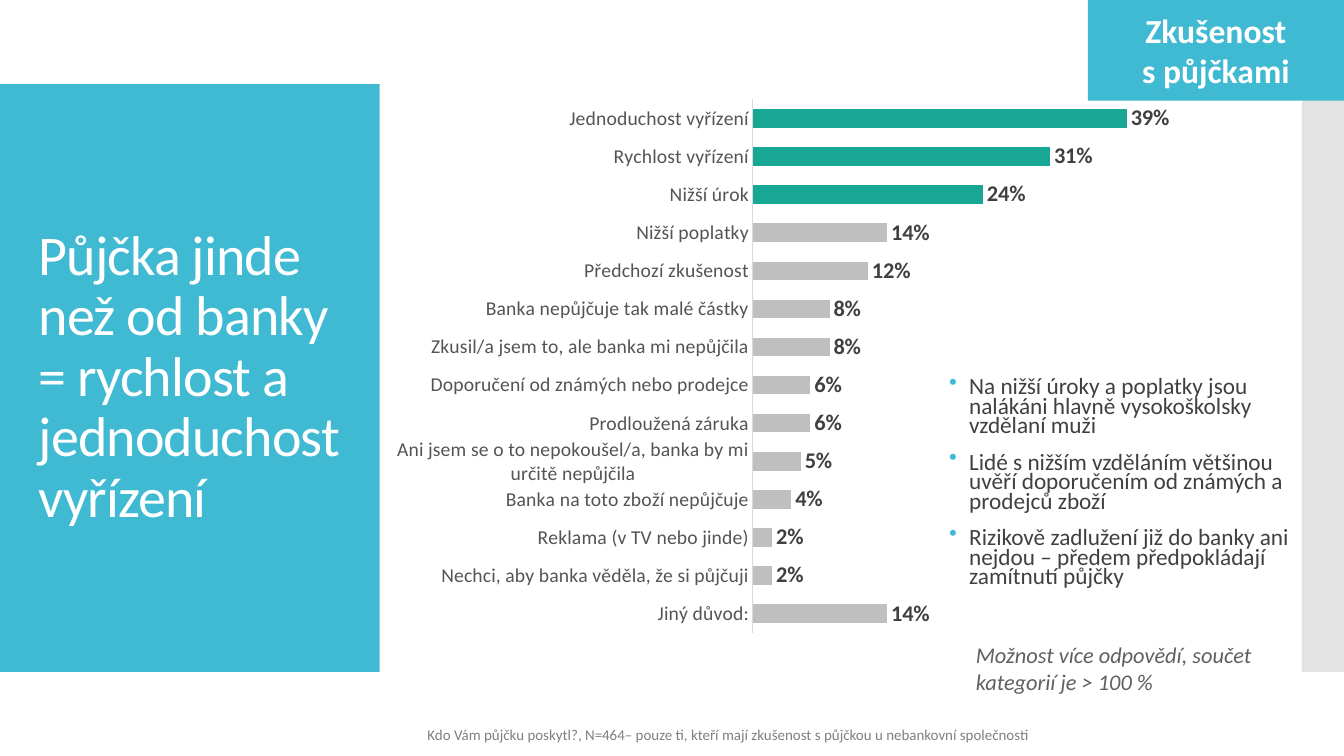
"""Build the slide on reasons for borrowing outside a bank."""
from dataclasses import dataclass

from lxml import etree
from pptx import Presentation, util as u
from pptx.chart.data import CategoryChartData
from pptx.dml.color import RGBColor
from pptx.enum import chart as charts, shapes, text
from pptx.oxml.ns import qn

FONT = "Calibri"
TURQUOISE = RGBColor(0x40, 0xBA, 0xD2)
GREEN = RGBColor(0x18, 0xA7, 0x94)
WHITE = RGBColor(0xFF, 0xFF, 0xFF)
STRIPE_GREY = RGBColor(0xC8, 0xC8, 0xC8)
BAR_GREY = RGBColor(0xBF, 0xBF, 0xBF)
AXIS_GREY = RGBColor(0xD9, 0xD9, 0xD9)
CATEGORY_GREY = RGBColor(0x54, 0x54, 0x54)
DARK_GREY = RGBColor(0x40, 0x40, 0x40)
NOTE_GREY = RGBColor(0x60, 0x60, 0x60)
SOURCE_GREY = RGBColor(0x80, 0x80, 0x80)

SLIDE_WIDTH, SLIDE_HEIGHT = u.Inches(13.33), u.Inches(7.5)
COLUMNS, ROWS = 160, 90


@dataclass(frozen=True)
class Area:
    """A rectangle in grid columns and rows."""
    column: float
    row: float
    columns: float
    rows: float

    def lengths(self) -> tuple[int, int, int, int]:
        """Return left, top, width and height on the slide."""
        across, down = SLIDE_WIDTH / COLUMNS, SLIDE_HEIGHT / ROWS
        return (round(self.column * across), round(self.row * down),
                round(self.columns * across), round(self.rows * down))


@dataclass(frozen=True)
class Panel:
    """A filled rectangle."""
    area: Area
    color: RGBColor
    opacity: int = 100


@dataclass(frozen=True)
class Caption:
    """A block of equally formatted paragraphs."""
    area: Area
    lines: tuple[str, ...]
    size: float
    color: RGBColor
    bold: bool = False
    italic: bool = False
    centred: bool = False
    middle: bool = False
    bulleted: bool = False
    line_spacing: float = 1.0
    tracking: int = 0


@dataclass(frozen=True)
class Reason:
    """A reason with its share of answers."""
    label: str
    share: float


TAG_AREA = Area(129.5, 0, 30.5, 12)
CHART_AREA = Area(45, 11.3, 96, 67.2)
PANELS = (
    Panel(Area(0, 10, 45.2, 70), TURQUOISE),
    Panel(Area(155, 10, 5, 70), STRIPE_GREY, opacity=50),
    Panel(TAG_AREA, TURQUOISE),
)
CAPTIONS = (
    Caption(Area(3.4, 14.8, 39.5, 60.4),
            ("Půjčka jinde než od banky = rychlost a jednoduchost vyřízení",),
            40, WHITE, middle=True, line_spacing=0.9, tracking=-60),
    Caption(Area(49.7, 85.8, 110.3, 3.4),
            ("Kdo Vám půjčku poskytl?, N=464– pouze ti, kteří mají zkušenost "
             "s půjčkou u nebankovní společnosti",), 10.7, SOURCE_GREY),
    Caption(Area(115, 75.7, 40.3, 7.7),
            ("Možnost více odpovědí, součet kategorií je > 100 %",),
            16, NOTE_GREY, italic=True),
    Caption(TAG_AREA, ("Zkušenost\vs půjčkami",), 24, WHITE,
            bold=True, centred=True, middle=True),
    Caption(Area(111.8, 42.5, 42.8, 29.4),
            ("Na nižší úroky a poplatky jsou nalákáni hlavně vysokoškolsky vzdělaní muži",
             "Lidé s nižším vzděláním většinou uvěří doporučením od známých a prodejců zboží",
             "Rizikově zadlužení již do banky ani nejdou – předem předpokládají "
             "zamítnutí půjčky"),
            16.6, DARK_GREY, bulleted=True, line_spacing=0.7),
)
HIGHLIGHTED = 3
REASONS = (
    Reason("Jednoduchost vyřízení", 0.39),
    Reason("Rychlost vyřízení", 0.31),
    Reason("Nižší úrok", 0.24),
    Reason("Nižší poplatky", 0.14),
    Reason("Předchozí zkušenost", 0.12),
    Reason("Banka nepůjčuje tak malé částky", 0.08),
    Reason("Zkusil/a jsem to, ale banka mi nepůjčila", 0.08),
    Reason("Doporučení od známých nebo prodejce", 0.06),
    Reason("Prodloužená záruka", 0.06),
    Reason("Ani jsem se o to nepokoušel/a, banka by mi určitě nepůjčila", 0.05),
    Reason("Banka na toto zboží nepůjčuje", 0.04),
    Reason("Reklama (v TV nebo jinde)", 0.02),
    Reason("Nechci, aby banka věděla, že si půjčuji", 0.02),
    Reason("Jiný důvod:", 0.14),
)


def set_font(font, size: float, color: RGBColor, bold=False, italic=False) -> None:
    """Format a font of a run or a chart part."""
    font.name, font.size = FONT, u.Pt(size)
    font.bold, font.italic = bold, italic
    font.color.rgb = color


def draw_panel(page, panel: Panel) -> None:
    """Draw a rectangle without an outline."""
    box = page.shapes.add_shape(shapes.MSO_SHAPE.RECTANGLE, *panel.area.lengths())
    box.shadow.inherit = False
    box.fill.solid()
    box.fill.fore_color.rgb = panel.color
    box.line.fill.background()
    if panel.opacity < 100:
        color = box.fill._xPr.find(".//" + qn("a:srgbClr"))
        etree.SubElement(color, qn("a:alpha"), val=str(panel.opacity * 1000))


def add_bullet(para) -> None:
    """Give a paragraph a turquoise bullet and a hanging indent."""
    properties = para._p.get_or_add_pPr()
    properties.set("marL", str(u.Inches(0.2)))
    properties.set("indent", str(-u.Inches(0.2)))
    color = etree.SubElement(properties, qn("a:buClr"))
    etree.SubElement(color, qn("a:srgbClr"), val=str(TURQUOISE))
    etree.SubElement(properties, qn("a:buChar"), char="•")


def draw_caption(page, caption: Caption) -> None:
    """Draw a text box with its paragraphs."""
    frame = page.shapes.add_textbox(*caption.area.lengths()).text_frame
    frame.word_wrap = True
    frame.vertical_anchor = text.MSO_ANCHOR.MIDDLE if caption.middle else text.MSO_ANCHOR.TOP
    if caption.bulleted:
        frame.margin_top = u.Inches(0.22)
    frame.text = "\n".join(caption.lines)
    for index, para in enumerate(frame.paragraphs):
        if caption.bulleted:
            add_bullet(para)
        para.line_spacing = caption.line_spacing
        para.alignment = text.PP_ALIGN.CENTER if caption.centred else text.PP_ALIGN.LEFT
        if index:
            para.space_before = u.Pt(12)
        for span in para.runs:
            set_font(span.font, caption.size, caption.color, caption.bold, caption.italic)
            if caption.tracking:
                span.font._element.set("spc", str(caption.tracking))


def place_plot(chart) -> None:
    """Fix the inner plot area as shares of the chart."""
    area = chart._chartSpace.chart.plotArea
    for old in area.findall(qn("c:layout")):
        area.remove(old)
    layout = etree.Element(qn("c:layout"))
    manual = etree.SubElement(layout, qn("c:manualLayout"))
    settings = (("layoutTarget", "inner"), ("xMode", "edge"), ("yMode", "edge"),
                ("x", "0.465"), ("y", "0.008"), ("w", "0.535"), ("h", "0.945"))
    for name, value in settings:
        etree.SubElement(manual, qn("c:" + name), val=value)
    area.insert(0, layout)


def draw_reasons(page) -> None:
    """Draw the bar chart of reasons."""
    data = CategoryChartData(number_format="0%")
    data.categories = [reason.label for reason in REASONS]
    data.add_series("Series 1", [reason.share for reason in REASONS])
    chart = page.shapes.add_chart(
        charts.XL_CHART_TYPE.BAR_CLUSTERED, *CHART_AREA.lengths(), data).chart
    chart.has_legend = chart.has_title = False
    set_font(chart.font, 16, DARK_GREY)
    place_plot(chart)

    categories, values = chart.category_axis, chart.value_axis
    categories.reverse_order = True
    categories.major_tick_mark = charts.XL_TICK_MARK.NONE
    categories.format.line.color.rgb = AXIS_GREY
    categories.format.line.width = u.Pt(0.75)
    set_font(categories.tick_labels.font, 14, CATEGORY_GREY)
    values.minimum_scale, values.maximum_scale = 0, 0.45
    values.has_major_gridlines = values.visible = False

    plot = chart.plots[0]
    plot.gap_width, plot.vary_by_categories = 106, False
    bars = plot.series[0]
    bars.format.fill.solid()
    bars.format.fill.fore_color.rgb = BAR_GREY
    for index in range(HIGHLIGHTED):
        fill = bars.points[index].format.fill
        fill.solid()
        fill.fore_color.rgb = GREEN
    labels = bars.data_labels
    labels.show_value = True
    labels.number_format, labels.number_format_is_linked = "0%", False
    labels.position = charts.XL_LABEL_POSITION.OUTSIDE_END
    set_font(labels.font, 16, DARK_GREY, bold=True)


def main() -> None:
    """Build and save the deck."""
    deck = Presentation()
    deck.slide_width, deck.slide_height = SLIDE_WIDTH, SLIDE_HEIGHT
    page = deck.slides.add_slide(deck.slide_layouts[6])
    draw_reasons(page)
    for panel in PANELS:
        draw_panel(page, panel)
    for caption in CAPTIONS:
        draw_caption(page, caption)
    deck.save("out.pptx")


if __name__ == "__main__":
    main()
